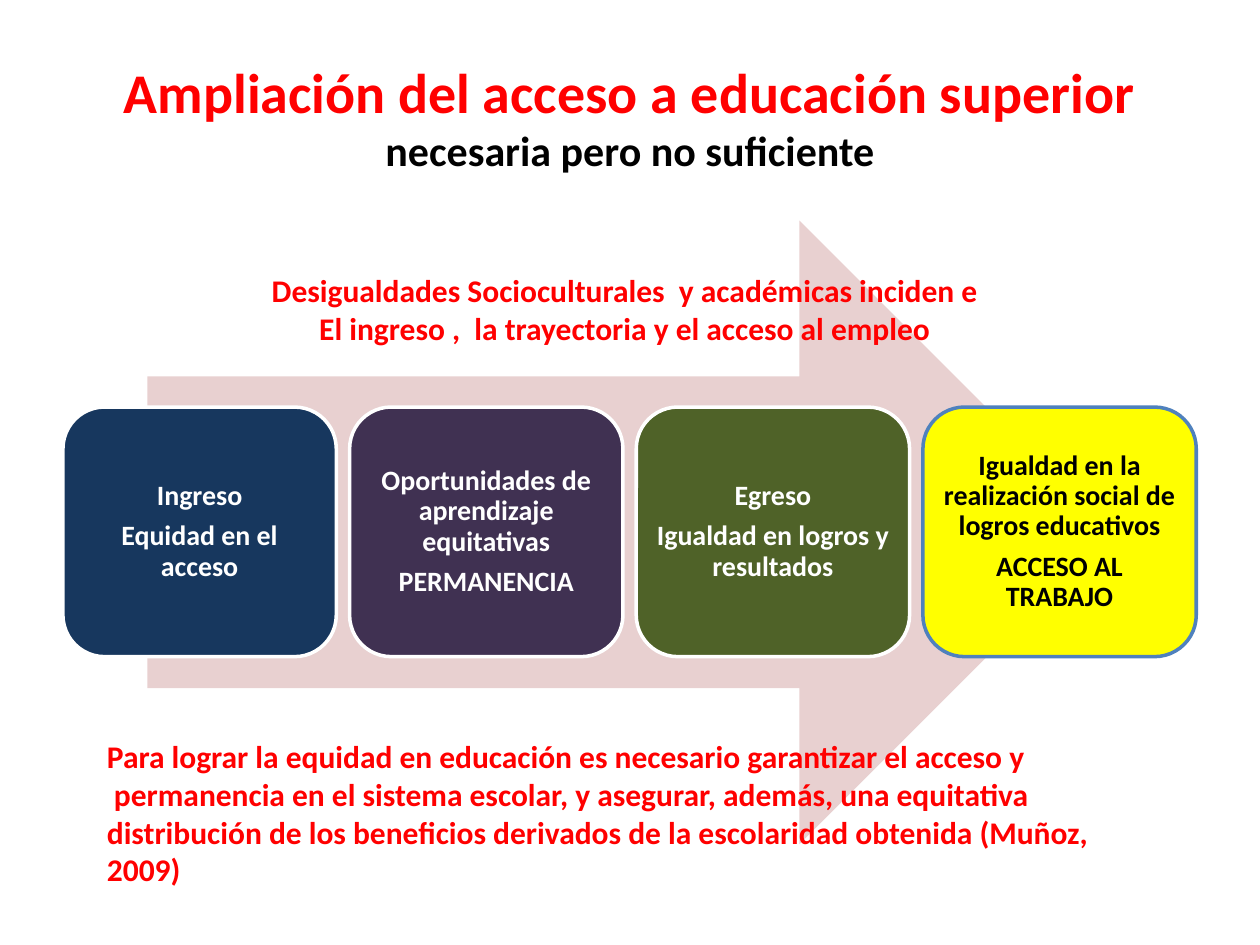
from pptx import Presentation
from pptx.dml.color import RGBColor
from pptx.enum.shapes import MSO_SHAPE
from pptx.enum.text import MSO_ANCHOR, PP_ALIGN
from pptx.util import Pt

ARROW, CARD = MSO_SHAPE.RIGHT_ARROW, MSO_SHAPE.ROUNDED_RECTANGLE
TOP, MIDDLE = MSO_ANCHOR.TOP, MSO_ANCHOR.MIDDLE
LEFT, CENTER = PP_ALIGN.LEFT, PP_ALIGN.CENTER

RED = RGBColor(0xFF, 0x00, 0x00)
BLACK = RGBColor(0x00, 0x00, 0x00)
WHITE = RGBColor(0xFF, 0xFF, 0xFF)
PINK = RGBColor(0xE8, 0xD0, 0xD0)
NAVY = RGBColor(0x17, 0x37, 0x5E)
PURPLE = RGBColor(0x40, 0x31, 0x52)
GREEN = RGBColor(0x4F, 0x62, 0x28)
YELLOW = RGBColor(0xFF, 0xFF, 0x00)
BLUE = RGBColor(0x4F, 0x81, 0xBD)

CARD_LEFT, CARD_TOP, CARD_PITCH = 36, 232.6, 163.8
CARD_WIDTH, CARD_HEIGHT = 156.2, 142.6
CARDS = [
    (NAVY, WHITE, WHITE, ["Ingreso", "Equidad en el acceso"]),
    (PURPLE, WHITE, WHITE,
     ["Oportunidades de aprendizaje equitativas", "PERMANENCIA"]),
    (GREEN, WHITE, WHITE, ["Egreso", "Igualdad en logros y resultados"]),
    (YELLOW, BLUE, BLACK,
     ["Igualdad en la realización social de logros educativos",
      "ACCESO AL TRABAJO"]),
]


class SlideWriter:
    """Holds the text style and the page being filled."""

    font = "Calibri"

    def __init__(self, page):
        self.page = page

    def span(self, para, text, size, color):
        span = para.add_run()
        span.text = text
        span.font.name = self.font
        span.font.size = Pt(size)
        span.font.bold = True
        span.font.color.rgb = color

    def paragraphs(self, frame, lines, size, color, align):
        for index, line in enumerate(lines):
            para = frame.add_paragraph() if index else frame.paragraphs[0]
            para.alignment = align
            self.span(para, line, size, color)

    def text_box(self, left, top, width, height, anchor=TOP):
        box = self.page.shapes.add_textbox(
            Pt(left), Pt(top), Pt(width), Pt(height))
        frame = box.text_frame
        frame.word_wrap = True
        frame.vertical_anchor = anchor
        return frame

    def title(self, heading, subheading):
        para = self.text_box(36, 21.6, 648, 90, MIDDLE).paragraphs[0]
        para.alignment = CENTER
        self.span(para, heading, 32, RED)
        para.add_line_break()
        self.span(para, subheading, 24, BLACK)

    def note(self, left, top, width, height, lines, align):
        frame = self.text_box(left, top, width, height)
        self.paragraphs(frame, lines, 18, RED, align)

    def shape(self, kind, left, top, width, height, fill, line=None):
        shape = self.page.shapes.add_shape(
            kind, Pt(left), Pt(top), Pt(width), Pt(height))
        shape.shadow.inherit = False
        shape.fill.solid()
        shape.fill.fore_color.rgb = fill
        if line is None:
            shape.line.fill.background()
        else:
            shape.line.color.rgb = line
            shape.line.width = Pt(2)
        return shape

    def card(self, left, fill, line, color, lines):
        frame = self.shape(CARD, left, CARD_TOP, CARD_WIDTH, CARD_HEIGHT,
                           fill, line).text_frame
        frame.word_wrap = True
        frame.vertical_anchor = MIDDLE
        frame.margin_left = frame.margin_right = Pt(4.8)
        frame.margin_top = frame.margin_bottom = Pt(4.8)
        self.paragraphs(frame, lines, 16, color, CENTER)
        for para in frame.paragraphs:
            para.line_spacing = 0.9
            para.space_after = Pt(5.6)


def main():
    deck = Presentation()
    deck.slide_width, deck.slide_height = Pt(720), Pt(540)
    writer = SlideWriter(deck.slides.add_slide(deck.slide_layouts[6]))

    writer.title("Ampliación del acceso a educación superior",
                 "necesaria pero no suficiente")
    writer.shape(ARROW, 84.2, 126, 550.8, 356.4, PINK)
    for index, card in enumerate(CARDS):
        writer.card(CARD_LEFT + index * CARD_PITCH, *card)
    writer.note(42.5, 151.2, 629.3, 72.7, [
        "Desigualdades Socioculturales  y académicas inciden e",
        "El ingreso ,  la trayectoria y el acceso al empleo",
    ], CENTER)
    writer.note(54, 417.6, 620.6, 72.7, [
        "Para lograr la equidad en educación es necesario garantizar el acceso y",
        " permanencia en el sistema escolar, y asegurar, además, una equitativa",
        "distribución de los beneficios derivados de la escolaridad obtenida "
        "(Muñoz, 2009)",
    ], LEFT)
    deck.save("out.pptx")


if __name__ == "__main__":
    main()
